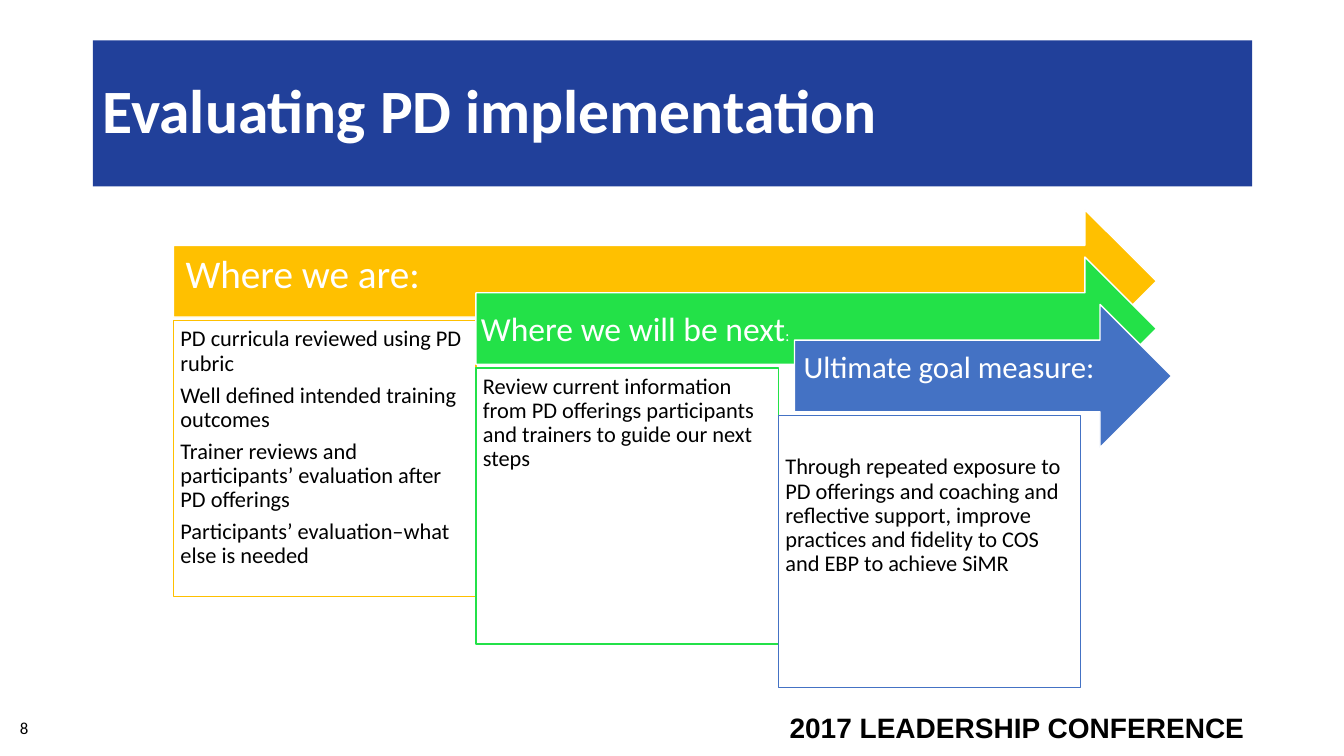
from pptx import Presentation
from pptx.dml.color import RGBColor
from pptx.enum.shapes import MSO_SHAPE
from pptx.enum.text import MSO_ANCHOR, PP_ALIGN
from pptx.util import Inches, Pt

WHITE = RGBColor(0xFF, 0xFF, 0xFF)
BLACK = RGBColor(0x00, 0x00, 0x00)
NAVY = RGBColor(0x21, 0x40, 0x9A)
AMBER = RGBColor(0xFF, 0xC0, 0x00)
GREEN = RGBColor(0x23, 0xE1, 0x48)
BLUE = RGBColor(0x44, 0x72, 0xC4)

TITLE = "Evaluating PD implementation"
CONFERENCE = "2017 LEADERSHIP CONFERENCE"
PAGE_NUMBER = "8"

# Insets run left, top, right, bottom
STAGES = [
    dict(label="Where we are:", size=28, color=AMBER,
         arrow_left=1.72, arrow_width=9.75, arrow_insets=(0.12, 0.12, 0.28, 0.23),
         box_height=2.74, box_inset_top=0.07,
         points=["PD curricula reviewed using PD rubric",
                 "Well defined intended training outcomes",
                 "Trainer reviews and participants’ evaluation after PD offerings",
                 "Participants’ evaluation–what else is needed"]),
    dict(label="Where we will be next", tail=":", size=24, color=GREEN,
         arrow_left=4.72, arrow_width=6.75, arrow_insets=(0.05, 0.27, 0.28, 0.23),
         box_height=2.74, box_inset_top=0.07,
         points=["Review current information from PD offerings participants "
                 "and trainers to guide our next steps"]),
    dict(label="Ultimate goal measure:", size=22, color=BLUE,
         arrow_left=7.88, arrow_width=3.74, arrow_insets=(0.09, 0.09, 0.28, 0.23),
         box_height=2.7, box_inset_top=0.4,
         points=["Through repeated exposure to PD offerings and coaching and "
                 "reflective support, improve practices and fidelity to COS "
                 "and EBP to achieve SiMR"]),
]
FIRST_LEFT, FIRST_TOP = 1.72, 2.08
STEP_RIGHT, STEP_DOWN = 3, 0.47
ARROW_HEIGHT, BOX_OFFSET = 1.42, 1.1


def write(shape, lines, size, color, font="Calibri", bold=False, align=PP_ALIGN.LEFT,
          anchor=MSO_ANCHOR.TOP, insets=(0.1, 0.05, 0.1, 0.05), line_spacing=1.0, after=0):
    frame = shape.text_frame
    frame.word_wrap = True
    frame.vertical_anchor = anchor
    (frame.margin_left, frame.margin_top,
     frame.margin_right, frame.margin_bottom) = map(Inches, insets)
    frame.text = "\n".join(lines)
    for para in frame.paragraphs:
        para.alignment = align
        para.line_spacing = line_spacing
        para.space_before = Pt(0)
        para.space_after = Pt(after)
        para.font.name = font
        para.font.size = Pt(size)
        para.font.bold = bold
        para.font.color.rgb = color


def add_block(page, kind, place, fill, line):
    block = page.shapes.add_shape(kind, *map(Inches, place))
    block.shadow.inherit = False
    block.fill.solid()
    block.fill.fore_color.rgb = fill
    block.line.color.rgb = line
    block.line.width = Pt(1)
    return block


def add_stage(page, index, stage):
    """Add one arrow with its label, and the box of points below it."""
    top = FIRST_TOP + index * STEP_DOWN
    arrow = add_block(page, MSO_SHAPE.RIGHT_ARROW,
                      (stage["arrow_left"], top, stage["arrow_width"], ARROW_HEIGHT),
                      stage["color"], WHITE)
    write(arrow, [stage["label"]], stage["size"], WHITE, anchor=MSO_ANCHOR.MIDDLE,
          insets=stage["arrow_insets"], line_spacing=0.9)
    if "tail" in stage:
        span = arrow.text_frame.paragraphs[0].add_run()
        span.text = stage["tail"]
        span.font.size = Pt(11)

    box = add_block(page, MSO_SHAPE.RECTANGLE,
                    (FIRST_LEFT + index * STEP_RIGHT, top + BOX_OFFSET,
                     STEP_RIGHT, stage["box_height"]),
                    WHITE, stage["color"])
    write(box, stage["points"], 16, BLACK, line_spacing=0.9, after=5.6,
          insets=(0.07, stage["box_inset_top"], 0.07, 0.07))


def main():
    deck = Presentation()
    deck.slide_width, deck.slide_height = Inches(13.33), Inches(7.5)
    page = deck.slides.add_slide(deck.slide_layouts[5])

    conference = page.shapes.add_textbox(*map(Inches, (7.52, 7, 4.92, 0.42)))
    write(conference, [CONFERENCE], 20, BLACK, font="Arial", bold=True, align=PP_ALIGN.RIGHT)
    number = page.shapes.add_textbox(*map(Inches, (0.1, 7.02, 3, 0.4)))
    write(number, [PAGE_NUMBER], 12, BLACK, anchor=MSO_ANCHOR.MIDDLE)

    title = page.shapes.title
    title.left, title.top, title.width, title.height = map(Inches, (0.92, 0.4, 11.5, 1.45))
    title.fill.solid()
    title.fill.fore_color.rgb = NAVY
    write(title, [TITLE], 44, WHITE, bold=True, anchor=MSO_ANCHOR.MIDDLE, line_spacing=0.9)

    for index, stage in enumerate(STAGES):
        add_stage(page, index, stage)
    deck.save("out.pptx")


if __name__ == "__main__":
    main()
